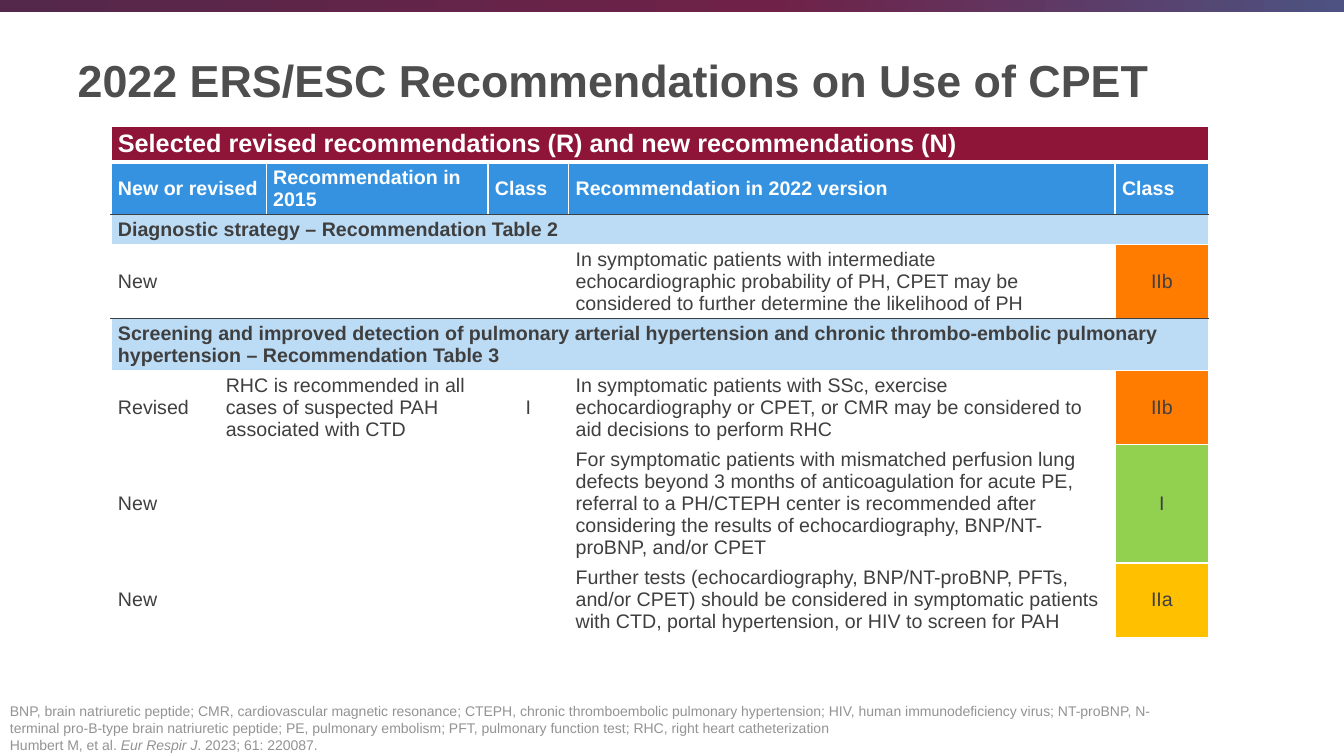
from dataclasses import dataclass
from copy import deepcopy

from lxml import etree
from pptx import Presentation
from pptx.dml.color import RGBColor
from pptx.enum.shapes import MSO_SHAPE
from pptx.enum.text import MSO_ANCHOR, MSO_AUTO_SIZE, PP_ALIGN
from pptx.oxml.ns import qn
from pptx.util import Inches, Pt

RECTANGLE = MSO_SHAPE.RECTANGLE
MIDDLE, BOTTOM = MSO_ANCHOR.MIDDLE, MSO_ANCHOR.BOTTOM
LEFT, CENTER = PP_ALIGN.LEFT, PP_ALIGN.CENTER
NO_AUTOFIT = MSO_AUTO_SIZE.NONE

TITLE_ONLY_LAYOUT = 5
FONT = "Arial"
WHITE, DARK, TITLE_GREY, FOOTER_GREY = "FFFFFF", "3F3F3F", "4D4E4D", "939393"
MAROON, BLUE, PALE_BLUE = "8E1537", "3592E0", "BCDBF5"
ORANGE, GREEN, AMBER = "FF7C00", "92D050", "FFC000"
BAR_STOPS = [(0, "54284B"), (0.57, "6F2147"), (1, "4D5282")]
COLUMN_WIDTHS = [1.07, 0.47, 2.2, 0.8, 5.42, 0.93]


@dataclass(frozen=True)
class Cell:
    text: str = ""
    span: int = 1
    fill: str = ""
    color: str = DARK
    bold: bool = False
    size: int = 14
    centered: bool = False


@dataclass(frozen=True)
class Row:
    height: float
    cells: list[Cell]
    top: tuple[str, int] = (WHITE, 1)
    bottom: tuple[str, int] = (WHITE, 1)


def header(text: str, span: int = 1) -> Cell:
    return Cell(text, span, BLUE, WHITE, True)


def section(text: str) -> Cell:
    return Cell(text, len(COLUMN_WIDTHS), PALE_BLUE, bold=True)


def grade(text: str, fill: str = "") -> Cell:
    return Cell(text, fill=fill, centered=True)


DARK_LINE = (DARK, 1)
ROWS = [
    Row(0.35, [Cell("Selected revised recommendations (R) and new recommendations (N)",
                    len(COLUMN_WIDTHS), MAROON, WHITE, True, 18)], bottom=(WHITE, 3)),
    Row(0.5, [header("New or revised", 2), header("Recommendation in 2015"), header("Class"),
              header("Recommendation in 2022 version"), header("Class")],
        top=(WHITE, 3), bottom=DARK_LINE),
    Row(0.29, [section("Diagnostic strategy – Recommendation Table 2")], top=DARK_LINE),
    Row(0.71, [Cell("New", 4),
               Cell("In symptomatic patients with intermediate\n"
                    "echocardiographic probability of PH, CPET may be\n"
                    "considered to further determine the likelihood of PH"),
               grade("IIb", ORANGE)], bottom=DARK_LINE),
    Row(0.5, [section("Screening and improved detection of pulmonary arterial hypertension and "
                      "chronic thrombo-embolic pulmonary hypertension – Recommendation Table 3")],
        top=DARK_LINE),
    Row(0.71, [Cell("Revised"),
               Cell("RHC is recommended in all cases of suspected PAH\nassociated with CTD", 2),
               grade("I"),
               Cell("In symptomatic patients with SSc, exercise echocardiography or CPET, or CMR "
                    "may be considered to aid decisions to perform RHC"),
               grade("IIb", ORANGE)]),
    Row(1.16, [Cell("New", 3), Cell(),
               Cell("For symptomatic patients with mismatched perfusion lung defects beyond 3 months "
                    "of anticoagulation for acute PE, referral to a PH/CTEPH center is recommended "
                    "after considering the results of echocardiography, BNP/NT-proBNP, and/or CPET"),
               grade("I", GREEN)]),
    Row(0.71, [Cell("New", 3), Cell(),
               Cell("Further tests (echocardiography, BNP/NT-proBNP, PFTs, and/or CPET) should be "
                    "considered in symptomatic patients with CTD, portal hypertension, or HIV to "
                    "screen for PAH"),
               grade("IIa", AMBER)]),
]

ABBREVIATIONS = (
    "BNP, brain natriuretic peptide; CMR, cardiovascular magnetic resonance; CTEPH, chronic "
    "thromboembolic pulmonary hypertension; HIV, human immunodeficiency virus; NT-proBNP, "
    "N-terminal pro-B-type brain natriuretic peptide; PE, pulmonary embolism; PFT, pulmonary "
    "function test; RHC, right heart catheterization")
CITATION = [("Humbert M, et al. ", False), ("Eur Respir J", True), (". 2023; 61: 220087.", False)]


def rgb(value: str) -> RGBColor:
    return RGBColor.from_string(value)


def add_run(paragraph, text: str, size: int, color: str, bold: bool = False,
            italic: bool = False) -> None:
    run = paragraph.add_run()
    run.text = text
    run.font.name, run.font.size = FONT, Pt(size)
    run.font.bold, run.font.italic = bold, italic
    run.font.color.rgb = rgb(color)


def add_top_bar(slide, width: int) -> None:
    bar = slide.shapes.add_shape(RECTANGLE, 0, 0, width, Inches(0.12))
    bar.shadow.inherit = False
    bar.line.fill.background()
    bar.fill.gradient()
    bar.fill.gradient_angle = 0
    stop_list = next(bar.element.iter(qn("a:gsLst")))
    stop_list.append(deepcopy(stop_list[-1]))
    for stop, (position, color) in zip(bar.fill.gradient_stops, BAR_STOPS):
        stop.position = position
        stop.color.rgb = rgb(color)


def add_title(slide) -> None:
    title = slide.shapes.title
    title.left, title.top = Inches(0.67), Inches(0.14)
    title.width, title.height = Inches(11.75), Inches(1.3)
    frame = title.text_frame
    frame.auto_size, frame.vertical_anchor = NO_AUTOFIT, MIDDLE
    paragraph = frame.paragraphs[0]
    paragraph.alignment = LEFT
    add_run(paragraph, "2022 ERS/ESC Recommendations on Use of CPET", 32, TITLE_GREY, True)


def set_borders(cell, row: Row) -> None:
    properties = cell._tc.get_or_add_tcPr()
    sides = {"lnL": (WHITE, 1), "lnR": (WHITE, 1), "lnT": row.top, "lnB": row.bottom}
    for tag, (color, width) in sides.items():
        line = etree.SubElement(properties, qn(f"a:{tag}"), w=str(Pt(width)))
        fill = etree.SubElement(line, qn("a:solidFill"))
        etree.SubElement(fill, qn("a:srgbClr"), val=color)


def fill_cell(cell, content: Cell) -> None:
    cell.vertical_anchor = MIDDLE
    cell.margin_left = cell.margin_right = Inches(0.07)
    cell.margin_top = cell.margin_bottom = Inches(0.04)
    if content.fill:
        cell.fill.solid()
        cell.fill.fore_color.rgb = rgb(content.fill)
    else:
        cell.fill.background()
    if not content.text:
        return
    frame = cell.text_frame
    for index, text in enumerate(content.text.split("\n")):
        paragraph = frame.add_paragraph() if index else frame.paragraphs[0]
        paragraph.alignment = CENTER if content.centered else LEFT
        add_run(paragraph, text, content.size, content.color, content.bold)


def add_recommendations(slide) -> None:
    table = slide.shapes.add_table(
        len(ROWS), len(COLUMN_WIDTHS), Inches(1.1), Inches(1.25),
        Inches(sum(COLUMN_WIDTHS)), Inches(sum(row.height for row in ROWS))).table
    table.first_row = table.horz_banding = False
    for column, width in zip(table.columns, COLUMN_WIDTHS):
        column.width = Inches(width)
    for row_index, row in enumerate(ROWS):
        table.rows[row_index].height = Inches(row.height)
        for column_index in range(len(COLUMN_WIDTHS)):
            set_borders(table.cell(row_index, column_index), row)
        start = 0
        for content in row.cells:
            cell = table.cell(row_index, start)
            if content.span > 1:
                cell.merge(table.cell(row_index, start + content.span - 1))
            fill_cell(cell, content)
            start += content.span


def add_footnote(slide) -> None:
    box = slide.shapes.add_textbox(0, Inches(7.04), Inches(11.75), Inches(0.48))
    frame = box.text_frame
    frame.word_wrap, frame.vertical_anchor = True, BOTTOM
    paragraph = frame.paragraphs[0]
    add_run(paragraph, ABBREVIATIONS, 10, FOOTER_GREY)
    paragraph.add_line_break()
    for text, italic in CITATION:
        add_run(paragraph, text, 10, FOOTER_GREY, italic=italic)


def main() -> None:
    presentation = Presentation()
    presentation.slide_width, presentation.slide_height = Inches(13.33), Inches(7.5)
    slide = presentation.slides.add_slide(presentation.slide_layouts[TITLE_ONLY_LAYOUT])
    add_top_bar(slide, presentation.slide_width)
    add_title(slide)
    add_recommendations(slide)
    add_footnote(slide)
    presentation.save("out.pptx")


if __name__ == "__main__":
    main()
